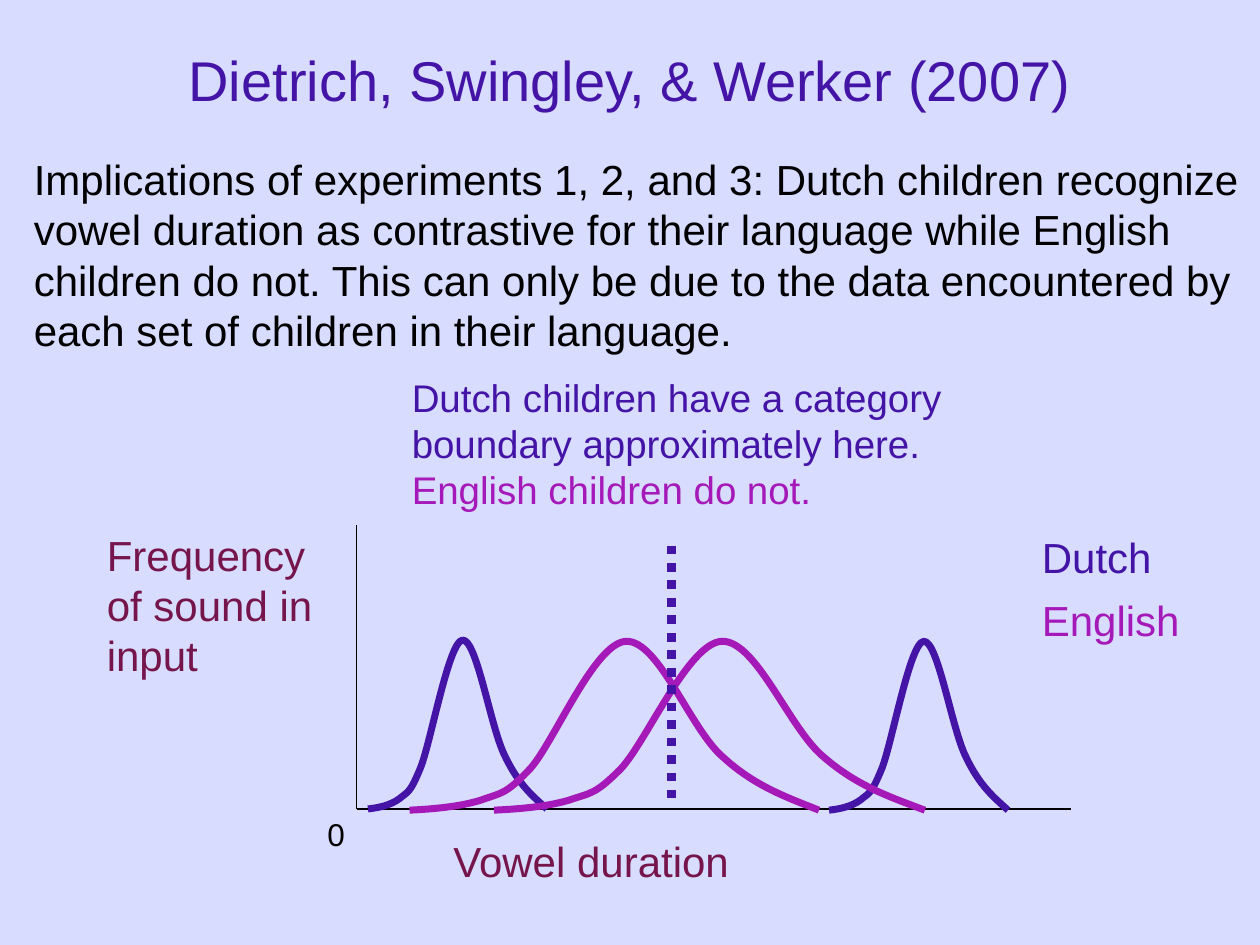
from dataclasses import dataclass

from lxml import etree
from pptx import Presentation
from pptx import util as u
from pptx.dml.color import RGBColor
from pptx.enum import dml, shapes, text
from pptx.oxml.ns import qn


@dataclass(frozen=True)
class Theme:
    font: str = "Arial"
    background: str = "D8DCFF"
    ink: str = "000000"
    dutch: str = "4414A7"
    english: str = "A519B9"
    axis_label: str = "76154B"
    title_size: int = 32
    body_size: int = 24
    note_size: int = 22
    tick_size: int = 18
    axis_width: float = 0.75
    curve_width: float = 4
    boundary_width: float = 5


THEME = Theme()

# Axes of the sketch, in inches
ORIGIN_X, ORIGIN_Y = 2.83, 6.42
AXIS_TOP, AXIS_RIGHT = 4.17, 8.5

# Bell curve as Bezier points: (percent of the width, inches above the base).
# After the start point, every three points make one curve segment.
BELL = [
    (0, 0),
    (6.5, 0.01), (12.6, 0.03), (17.5, 0.08),
    (22.5, 0.14), (23.4, 0.12), (29.5, 0.33),
    (35.3, 0.54), (45.2, 1.33), (52.9, 1.34),
    (60.9, 1.35), (68.6, 0.64), (76.6, 0.42),
    (84.3, 0.19), (92.3, 0.1), (100, 0),
]


def add_text(slide, box, lines, size):
    """Add a text box; lines is a list of (wording, colour) paragraphs."""
    label = slide.shapes.add_textbox(*map(u.Inches, box))
    frame = label.text_frame
    frame.word_wrap = True
    frame.auto_size = text.MSO_AUTO_SIZE.SHAPE_TO_FIT_TEXT
    for index, (wording, colour) in enumerate(lines):
        paragraph = frame.add_paragraph() if index else frame.paragraphs[0]
        paragraph.text = wording
        paragraph.font.name = THEME.font
        paragraph.font.size = u.Pt(size)
        paragraph.font.color.rgb = RGBColor.from_string(colour)
    return frame


def add_title(slide, wording):
    frame = add_text(slide, (0, 0, 10, 1.25), [(wording, THEME.dutch)], THEME.title_size)
    frame.auto_size = text.MSO_AUTO_SIZE.NONE
    frame.vertical_anchor = text.MSO_ANCHOR.MIDDLE
    frame.paragraphs[0].alignment = text.PP_ALIGN.CENTER


def set_line(line, colour, width):
    line.color.rgb = RGBColor.from_string(colour)
    line.width = u.Pt(width)


def add_line(slide, start, end, colour, width):
    connector = slide.shapes.add_connector(
        shapes.MSO_CONNECTOR.STRAIGHT, *map(u.Inches, start + end))
    set_line(connector.line, colour, width)
    etree.SubElement(connector._element.spPr, qn("a:effectLst"))
    return connector


def add_bell(slide, left, base, width, colour):
    """Draw one sound category as a smooth, open bell curve."""
    points = [(u.Inches(left + width * share / 100), u.Inches(base - height))
              for share, height in BELL]
    builder = slide.shapes.build_freeform(*points[0])
    builder.add_line_segments(points[1:], close=False)
    curve = builder.convert_to_shape()
    curve.shadow.inherit = False
    curve.fill.background()
    set_line(curve.line, colour, THEME.curve_width)

    # Join each three line points into one Bezier segment
    outline = next(curve._element.iter(qn("a:path")))
    steps = outline.findall(qn("a:lnTo"))
    for first in range(0, len(steps), 3):
        segment = etree.SubElement(outline, qn("a:cubicBezTo"))
        for step in steps[first:first + 3]:
            segment.append(step[0])
            outline.remove(step)


def main():
    deck = Presentation()
    deck.slide_width, deck.slide_height = u.Inches(10), u.Inches(7.5)
    slide = deck.slides.add_slide(deck.slide_layouts[6])
    slide.background.fill.solid()
    slide.background.fill.fore_color.rgb = RGBColor.from_string(THEME.background)

    # Title and finding
    add_title(slide, "Dietrich, Swingley, & Werker (2007)")
    add_text(slide, (0.17, 1.17, 9.83, 1.7), [(
        "Implications of experiments 1, 2, and 3: Dutch children recognize vowel "
        "duration as contrastive for their language while English children do not. "
        "This can only be due to the data encountered by each set of children in "
        "their language.", THEME.ink)], THEME.body_size)

    # Axes
    origin = (ORIGIN_X, ORIGIN_Y)
    for start, end in [((ORIGIN_X, AXIS_TOP), origin), (origin, (AXIS_RIGHT, ORIGIN_Y))]:
        add_line(slide, start, end, THEME.ink, THEME.axis_width)

    # Axis labels and language key
    for box, wording, colour, size in [
        ((0.75, 4.15, 1.83, 1.7), "Frequency of sound in input",
         THEME.axis_label, THEME.body_size),
        ((3.5, 6.58, 2.83, 0.5), "Vowel duration", THEME.axis_label, THEME.body_size),
        ((2.5, 6.42, 0.42, 0.4), "0", THEME.ink, THEME.tick_size),
        ((8.17, 4.17, 1.42, 0.5), "Dutch", THEME.dutch, THEME.body_size),
        ((8.17, 4.67, 1.42, 0.5), "English", THEME.english, THEME.body_size),
    ]:
        add_text(slide, box, [(wording, colour)], size)

    # Note on the category boundary
    add_text(slide, (3.17, 2.92, 4.83, 1.2), [
        ("Dutch children have a category boundary approximately here.", THEME.dutch),
        ("English children do not.", THEME.english),
    ], THEME.note_size)

    # Distributions: two far apart for Dutch, two overlapping for English
    for left, base, width, colour in [
        (2.92, 6.42, 1.42, THEME.dutch),
        (6.58, 6.43, 1.42, THEME.dutch),
        (3.25, 6.43, 3.25, THEME.english),
        (3.92, 6.43, 3.42, THEME.english),
    ]:
        add_bell(slide, left, base, width, colour)

    # Dutch category boundary
    boundary = add_line(slide, (5.33, 4.33), (5.33, 6.33),
                        THEME.dutch, THEME.boundary_width)
    boundary.line.dash_style = dml.MSO_LINE.ROUND_DOT

    deck.save("out.pptx")


if __name__ == "__main__":
    main()
